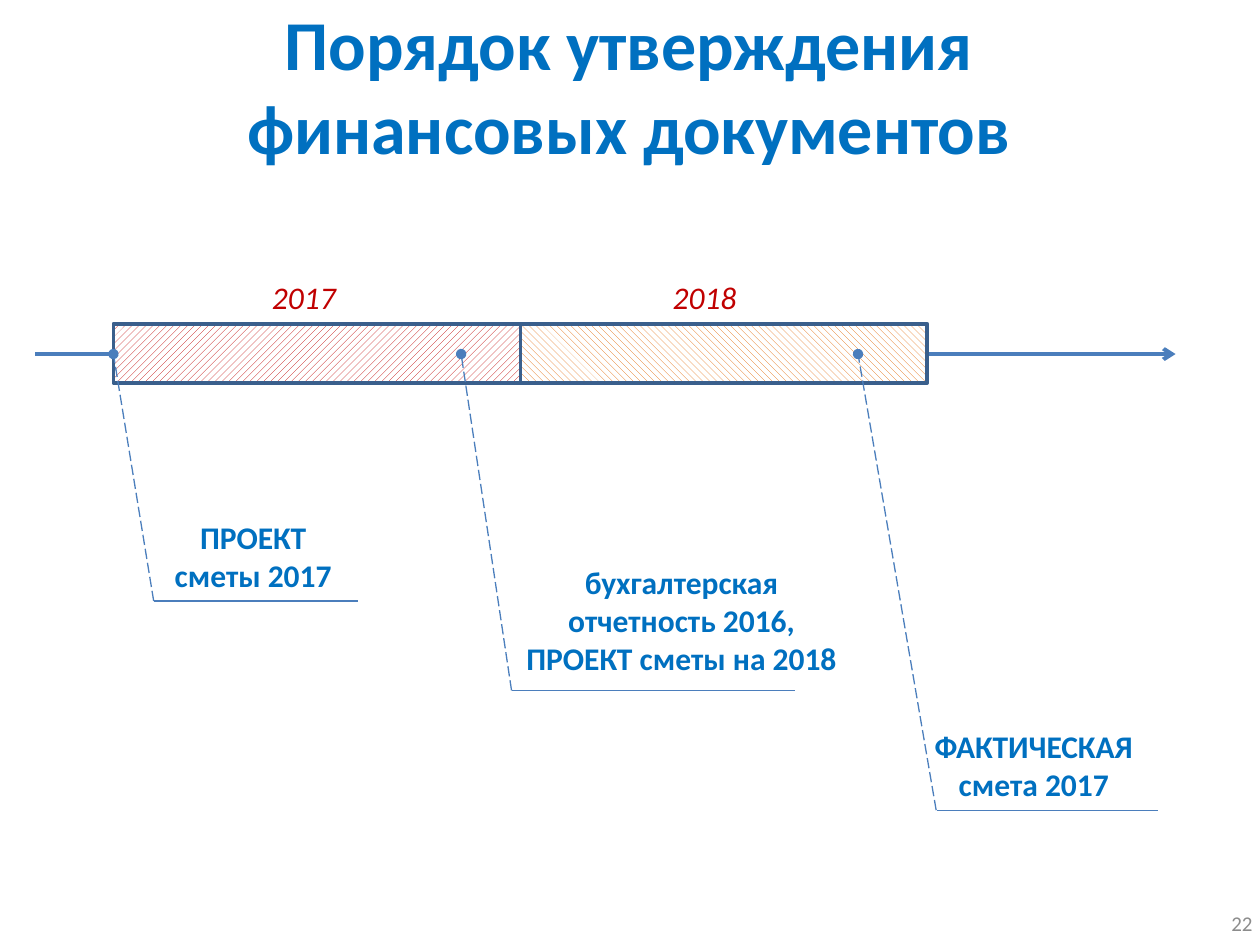
"""Build a timeline slide on the approval order of financial papers."""
from dataclasses import dataclass

from lxml.etree import SubElement as Sub
from pptx import Presentation
from pptx.dml.color import RGBColor
from pptx.enum.dml import MSO_LINE, MSO_PATTERN
from pptx.enum.shapes import MSO_CONNECTOR, MSO_SHAPE
from pptx.enum.text import MSO_ANCHOR, MSO_AUTO_SIZE, PP_ALIGN
from pptx.oxml.ns import qn
from pptx.slide import Slide
from pptx.text.text import TextFrame
from pptx.util import Inches, Pt

BLUE = RGBColor(0x00, 0x70, 0xC0)
RED = RGBColor(0xC0, 0x00, 0x00)
AMBER = RGBColor(0xE4, 0x6C, 0x0A)
LINE = RGBColor(0x4B, 0x7E, 0xBC)
EDGE = RGBColor(0x3A, 0x5F, 0x8C)
GREY = RGBColor(0x8C, 0x8C, 0x8C)
WHITE = RGBColor(0xFF, 0xFF, 0xFF)

AXIS = 2.81
TOP, WIDE, HIGH = 2.57, 3.23, 0.47

BASE = {"name": "Calibri"}
HEAD = BASE | {"size": Pt(40), "bold": True}
NOTE = BASE | {"size": Pt(18), "bold": True}
DATE = BASE | {"size": Pt(18), "italic": True}
PAGE = BASE | {"size": Pt(12)}

Point = tuple[float, float]
Box = tuple[float, float, float, float]


@dataclass
class Year:
    text: str
    left: float
    label: float
    color: RGBColor
    hatch: MSO_PATTERN


@dataclass
class Event:
    lines: list[str]
    box: Box
    dot: float
    foot: Point
    start: float
    end: float
    wrap: bool = False


YEARS = [
    Year("2017", 0.9, 2.06, RED, MSO_PATTERN.WIDE_UPWARD_DIAGONAL),
    Year("2018", 0.9 + WIDE, 5.24, AMBER, MSO_PATTERN.WIDE_DOWNWARD_DIAGONAL),
]
EVENTS = [
    Event(["ПРОЕКТ", "сметы 2017"], (1.28, 4.06, 1.46, 0.71),
          0.9, (1.22, 4.77), 1.22, 2.84),
    Event(["бухгалтерская", "отчетность 2016,", "ПРОЕКТ сметы на 2018"],
          (3.98, 4.42, 2.86, 1.01), 3.66, (4.06, 5.48), 4.06, 6.31, True),
    Event(["ФАКТИЧЕСКАЯ", "смета 2017"], (7.31, 5.72, 1.79, 0.71),
          6.81, (7.43, 6.43), 7.44, 9.19),
]


def write(frame: TextFrame, lines: list[str], color: RGBColor,
          style: dict, align: PP_ALIGN) -> None:
    for i, line in enumerate(lines):
        para = frame.add_paragraph() if i else frame.paragraphs[0]
        para.alignment = align
        run = para.add_run()
        run.text = line
        for key, value in style.items():
            setattr(run.font, key, value)
        run.font.color.rgb = color


def label(slide: Slide, box: Box, lines: list[str], color: RGBColor,
          style: dict, align: PP_ALIGN, wrap: bool = False) -> TextFrame:
    frame = slide.shapes.add_textbox(*map(Inches, box)).text_frame
    frame.word_wrap = wrap
    write(frame, lines, color, style, align)
    return frame


def rule(slide: Slide, start: Point, end: Point, width: float = 0.75,
         tip: str = "", dash: bool = False) -> None:
    line = slide.shapes.add_connector(
        MSO_CONNECTOR.STRAIGHT, *map(Inches, start + end))
    line.line.color.rgb = LINE
    line.line.width = Pt(width)
    if dash:
        line.line.dash_style = MSO_LINE.LONG_DASH
    props = line._element.spPr
    if tip:
        Sub(props.find(qn("a:ln")), qn("a:tailEnd"), type=tip)
    Sub(props, qn("a:effectLst"))


def draw_year(slide: Slide, year: Year) -> None:
    bar = slide.shapes.add_shape(
        MSO_SHAPE.RECTANGLE, *map(Inches, (year.left, TOP, WIDE, HIGH)))
    bar.shadow.inherit = False
    bar.fill.patterned()
    bar.fill.pattern = year.hatch
    bar.fill.fore_color.rgb = year.color
    bar.fill.back_color.rgb = WHITE
    bar.line.color.rgb = EDGE
    bar.line.width = Pt(2)
    label(slide, (year.label, 2.16, 0.71, 0.4), [year.text],
          RED, DATE, PP_ALIGN.LEFT)


def draw_event(slide: Slide, event: Event) -> None:
    level = event.foot[1]
    rule(slide, event.foot, (event.dot, AXIS), tip="oval", dash=True)
    rule(slide, (event.start, level), (event.end, level))
    label(slide, event.box, event.lines, BLUE, NOTE,
          PP_ALIGN.CENTER, event.wrap)


def main() -> None:
    deck = Presentation()
    deck.slide_width, deck.slide_height = Inches(10), Inches(7.5)
    slide = deck.slides.add_slide(deck.slide_layouts[5])
    title = slide.shapes.title
    place = {"left": -0.01, "top": 0.27, "width": 10, "height": 0.8}
    for key, value in place.items():
        setattr(title, key, Inches(value))
    frame = title.text_frame
    frame.auto_size = MSO_AUTO_SIZE.NONE
    frame.vertical_anchor = MSO_ANCHOR.MIDDLE
    write(frame, ["Порядок утверждения", "финансовых документов"],
          BLUE, HEAD, PP_ALIGN.CENTER)
    page = label(slide, (7.71, 7.13, 2.33, 0.4), ["22"], GREY, PAGE,
                 PP_ALIGN.RIGHT, True)
    page.vertical_anchor = MSO_ANCHOR.MIDDLE
    rule(slide, (0.28, AXIS), (9.33, AXIS), 2.25, "arrow")
    for year in YEARS:
        draw_year(slide, year)
    for event in EVENTS:
        draw_event(slide, event)
    deck.save("out.pptx")


if __name__ == "__main__":
    main()
